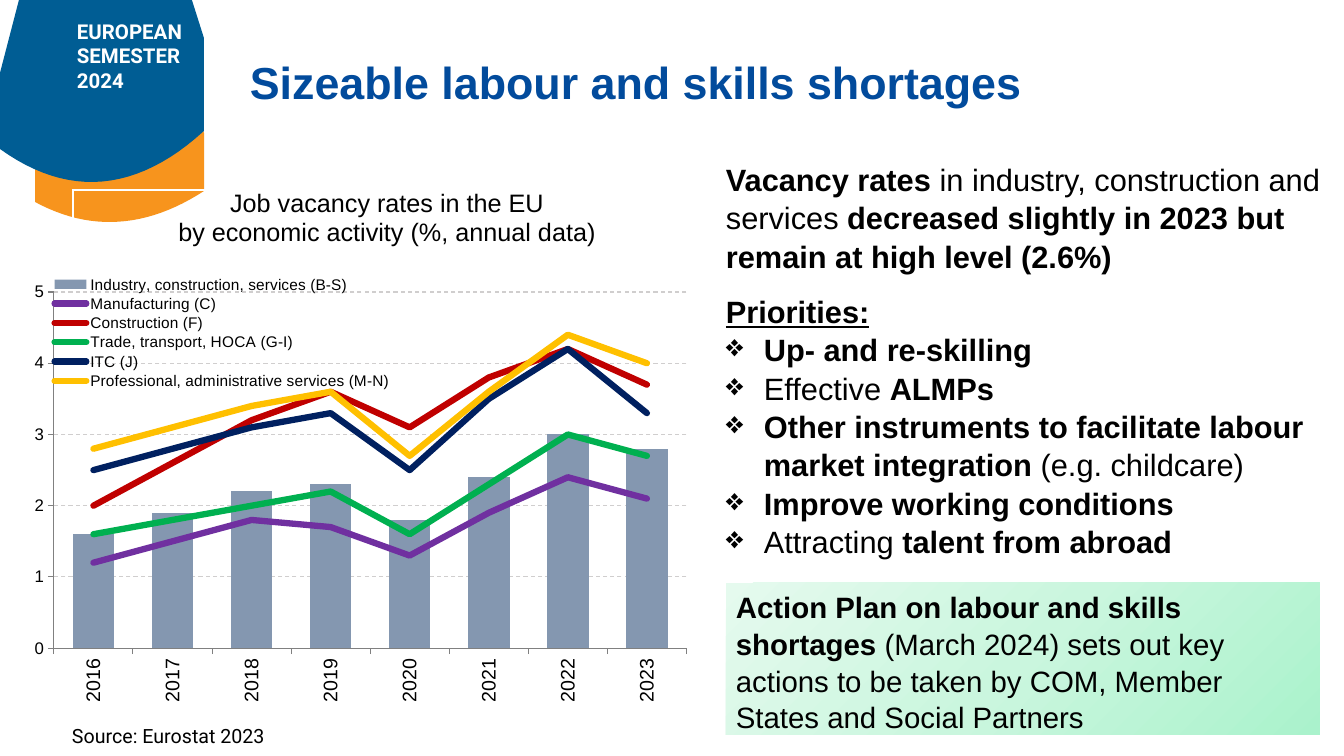
from dataclasses import dataclass

from lxml import etree
from pptx import Presentation
from pptx.chart.data import CategoryChartData
from pptx.dml.color import RGBColor
from pptx.enum.chart import XL_CHART_TYPE, XL_LEGEND_POSITION, XL_MARKER_STYLE, XL_TICK_MARK
from pptx.enum.dml import MSO_LINE
from pptx.enum.shapes import MSO_SHAPE
from pptx.enum.text import MSO_ANCHOR, PP_ALIGN
from pptx.oxml import parse_xml
from pptx.oxml.ns import nsdecls, qn
from pptx.util import Emu, Pt

Point = tuple[float, float]
Box = tuple[int, int, int, int]


@dataclass
class Run:
    text: str
    bold: bool = False
    underline: bool = False


@dataclass
class Para:
    runs: list[Run]
    before: int = 0
    after: int = 0
    bullet: bool = False


@dataclass
class Ribbon:
    """A badge part: straight sides and a curved lower edge."""
    color: str
    sides: list[Point]
    start: Point
    control: Point
    end: Point


@dataclass
class Sector:
    name: str
    color: str
    rates: list[float]


RIBBONS = [
    Ribbon("F7941D", [(204, 133), (194, 109), (51, 109), (35, 154)], (35, 202), (118, 247), (204, 191)),
    Ribbon("005D94", [(204, 38), (192, 0), (19, 0), (0, 73)], (0, 149), (103, 223), (204, 131)),
]
YEARS = [str(year) for year in range(2016, 2024)]
SECTORS = [
    Sector("Industry, construction, services (B-S)", "8497B0", [1.6, 1.9, 2.2, 2.3, 1.8, 2.4, 3, 2.8]),
    Sector("Manufacturing (C)", "7030A0", [1.2, 1.5, 1.8, 1.7, 1.3, 1.9, 2.4, 2.1]),
    Sector("Construction (F)", "C00000", [2, 2.6, 3.2, 3.6, 3.1, 3.8, 4.2, 3.7]),
    Sector("Trade, transport, HOCA (G-I)", "00B050", [1.6, 1.8, 2, 2.2, 1.6, 2.3, 3, 2.7]),
    Sector("ITC (J)", "002060", [2.5, 2.8, 3.1, 3.3, 2.5, 3.5, 4.2, 3.3]),
    Sector("Professional, administrative services (M-N)", "FFC000", [2.8, 3.1, 3.4, 3.6, 2.7, 3.6, 4.4, 4]),
]
MESSAGES = [
    Para([Run("Vacancy rates ", True), Run("in industry, construction and services"),
          Run(" decreased slightly in 2023 but remain at high level (2.6%)", True)], after=6),
    Para([Run("Priorities:", True, True)], before=6),
    Para([Run("Up- and re-skilling", True)], bullet=True),
    Para([Run("Effective "), Run("ALMPs", True)], bullet=True),
    Para([Run("Other instruments to facilitate labour market integration ", True),
          Run("(e.g. childcare)")], bullet=True),
    Para([Run("Improve working conditions", True)], bullet=True),
    Para([Run("Attracting"), Run(" talent from abroad", True)], bullet=True),
]
ACTION_PLAN = [Para([
    Run("Action Plan on labour and skills shortages ", True),
    Run("(March 2024) sets out key actions to be taken by COM, Member States and Social Partners"),
])]


def px(n: float) -> Emu:
    return Emu(round(n * 914400 / 100.8))


def rgb(color: str) -> RGBColor:
    return RGBColor.from_string(color)


def set_font(font, size: float, color: str = "000000", name: str = "Arial") -> None:
    font.size, font.name = Pt(size), name
    font.color.rgb = rgb(color)


def write(tf, paras: list[Para], size: float, color: str = "000000", font: str = "Arial",
          align=PP_ALIGN.LEFT, spacing: float = 1.0) -> None:
    tf.word_wrap = True
    for i, para in enumerate(paras):
        p = tf.add_paragraph() if i else tf.paragraphs[0]
        p.alignment, p.line_spacing = align, spacing
        p.space_before, p.space_after = Pt(para.before), Pt(para.after)
        if para.bullet:
            pPr = p._p.get_or_add_pPr()
            pPr.set("marL", str(px(38)))
            pPr.set("indent", str(-px(38)))
            etree.SubElement(pPr, qn("a:buChar")).set("char", "❖")
        for run in para.runs:
            r = p.add_run()
            r.text = run.text
            set_font(r.font, size, color, font)
            r.font.bold, r.font.underline = run.bold, run.underline


def add_text(slide, box: Box, paras: list[Para], size: float, anchor=MSO_ANCHOR.TOP, **style) -> None:
    tf = slide.shapes.add_textbox(*map(px, box)).text_frame
    tf.vertical_anchor = anchor
    write(tf, paras, size, **style)


def add_caption(slide, box: Box, paras: list[Para], size: float, **style) -> None:
    """Add a one-cell table without fill."""
    table = slide.shapes.add_table(1, 1, *map(px, box)).table
    table.first_row = table.horz_banding = False
    cell = table.cell(0, 0)
    cell.fill.background()
    cell.margin_left = cell.margin_right = px(12)
    cell.margin_top = cell.margin_bottom = 0
    write(cell.text_frame, paras, size, **style)


def add_ribbon(slide, ribbon: Ribbon, steps: int = 24) -> None:
    curve = []
    for i in range(steps + 1):
        t = i / steps
        curve.append(tuple((1 - t) ** 2 * a + 2 * t * (1 - t) * b + t ** 2 * c
                           for a, b, c in zip(ribbon.start, ribbon.control, ribbon.end)))
    first, *rest = [(px(x), px(y)) for x, y in ribbon.sides + curve]
    builder = slide.shapes.build_freeform(*first)
    builder.add_line_segments(rest)
    sp = builder.convert_to_shape()
    sp.shadow.inherit = False
    sp.fill.solid()
    sp.fill.fore_color.rgb = rgb(ribbon.color)
    sp.line.fill.background()


def layout_xml(x: float, y: float, w: float, h: float, inner: bool = False):
    target = '<c:layoutTarget val="inner"/>' if inner else ""
    return parse_xml(
        f'<c:layout {nsdecls("c")}><c:manualLayout>{target}<c:xMode val="edge"/><c:yMode val="edge"/>'
        f'<c:x val="{x}"/><c:y val="{y}"/><c:w val="{w}"/><c:h val="{h}"/></c:manualLayout></c:layout>')


def remove_children(parent, tag: str) -> None:
    for child in parent.findall(qn(tag)):
        parent.remove(child)


def turn_into_lines(chart) -> None:
    """Move every series but the first from the bar plot to a line plot."""
    bar = chart._chartSpace.find(".//" + qn("c:barChart"))
    lines = parse_xml(f'<c:lineChart {nsdecls("c")}><c:grouping val="standard"/>'
                      '<c:varyColors val="0"/></c:lineChart>')
    for ser in bar.findall(qn("c:ser"))[1:]:
        remove_children(ser, "c:invertIfNegative")
        lines.append(ser)
    etree.SubElement(lines, qn("c:marker")).set("val", "1")
    for axis in bar.findall(qn("c:axId")):
        etree.SubElement(lines, qn("c:axId")).set("val", axis.get("val"))
    bar.addnext(lines)


def add_vacancy_chart(slide, box: Box) -> None:
    data = CategoryChartData()
    data.categories = YEARS
    for sector in SECTORS:
        data.add_series(sector.name, sector.rates)
    chart = slide.shapes.add_chart(XL_CHART_TYPE.COLUMN_CLUSTERED, *map(px, box), data).chart
    set_font(chart.font, 10)
    chart.has_title = False
    turn_into_lines(chart)

    bars, lines = chart.plots
    bars.gap_width, bars.vary_by_categories = 90, False
    fill = bars.series[0].format.fill
    fill.solid()
    fill.fore_color.rgb = rgb(SECTORS[0].color)
    for series, sector in zip(lines.series, SECTORS[1:]):
        series.smooth = False
        series.marker.style = XL_MARKER_STYLE.NONE
        line = series.format.line
        line.color.rgb, line.width = rgb(sector.color), Pt(4.5)
        series._element.find(".//" + qn("a:ln")).set("cap", "rnd")

    years, rates = chart.category_axis, chart.value_axis
    for axis, size in ((years, 14), (rates, 12)):
        set_font(axis.tick_labels.font, size)
        axis.major_tick_mark = XL_TICK_MARK.OUTSIDE
        axis.format.line.color.rgb, axis.format.line.width = rgb("808080"), Pt(0.75)
    years._element.find(".//" + qn("a:bodyPr")).set("rot", "-5400000")
    rates.minimum_scale, rates.maximum_scale, rates.major_unit = 0, 5, 1
    rates.tick_labels.number_format = "General"
    rates.tick_labels.number_format_is_linked = False
    grid = rates.major_gridlines.format.line
    grid.color.rgb, grid.width, grid.dash_style = rgb("D0CECE"), Pt(0.75), MSO_LINE.DASH

    chart.has_legend = True
    legend = chart.legend
    legend.position, legend.include_in_layout = XL_LEGEND_POSITION.BOTTOM, False
    set_font(legend.font, 11)
    remove_children(legend._element, "c:layout")
    legend._element.find(qn("c:legendPos")).addnext(layout_xml(0.03, 0, 0.52, 0.26))
    plot_area = chart._chartSpace.find(".//" + qn("c:plotArea"))
    remove_children(plot_area, "c:layout")
    plot_area.insert(0, layout_xml(0.04, 0.04, 0.94, 0.79, inner=True))


def add_action_plan(slide, box: Box) -> None:
    sp = slide.shapes.add_shape(MSO_SHAPE.RECTANGLE, *map(px, box))
    sp.shadow.inherit = False
    sp.line.fill.background()
    stops = "".join(f'<a:gs pos="{pos}"><a:srgbClr val="{color}"/></a:gs>'
                    for pos, color in ((0, "AAF2CC"), (50000, "CAF6DE"), (100000, "E5FAEE")))
    sp._element.spPr.find(qn("a:prstGeom")).addnext(parse_xml(
        f'<a:gradFill {nsdecls("a")}><a:gsLst>{stops}</a:gsLst>'
        '<a:path path="circle"><a:fillToRect l="100000" t="100000"/></a:path></a:gradFill>'))
    sp.text_frame.vertical_anchor = MSO_ANCHOR.TOP
    write(sp.text_frame, ACTION_PLAN, 21, spacing=1.04)


def main() -> None:
    prs = Presentation()
    prs.slide_width, prs.slide_height = px(1344), px(756)
    slide = prs.slides.add_slide(prs.slide_layouts[6])
    for ribbon in RIBBONS:
        add_ribbon(slide, ribbon)
    add_text(slide, (67, 14, 137, 85), [Para([Run("EUROPEAN SEMESTER 2024", True)])], 14.6,
             color="FFFFFF", font="Roboto")
    add_text(slide, (240, 50, 1048, 70), [Para([Run("Sizeable labour and skills shortages", True)])], 32,
             anchor=MSO_ANCHOR.MIDDLE, color="024B9C", spacing=0.9)
    add_vacancy_chart(slide, (27, 274, 673, 451))
    add_caption(slide, (73, 190, 628, 60), [Para([Run("Job vacancy rates in the EU")]),
                Para([Run("by economic activity (%, annual data)")])], 18, align=PP_ALIGN.CENTER)
    add_text(slide, (716, 154, 628, 400), MESSAGES, 22, spacing=1.04)
    add_caption(slide, (60, 725, 732, 25), [Para([Run("Source: Eurostat 2023")])], 14, font="Roboto")
    add_action_plan(slide, (726, 583, 594, 152))
    prs.save("out.pptx")


if __name__ == "__main__":
    main()
